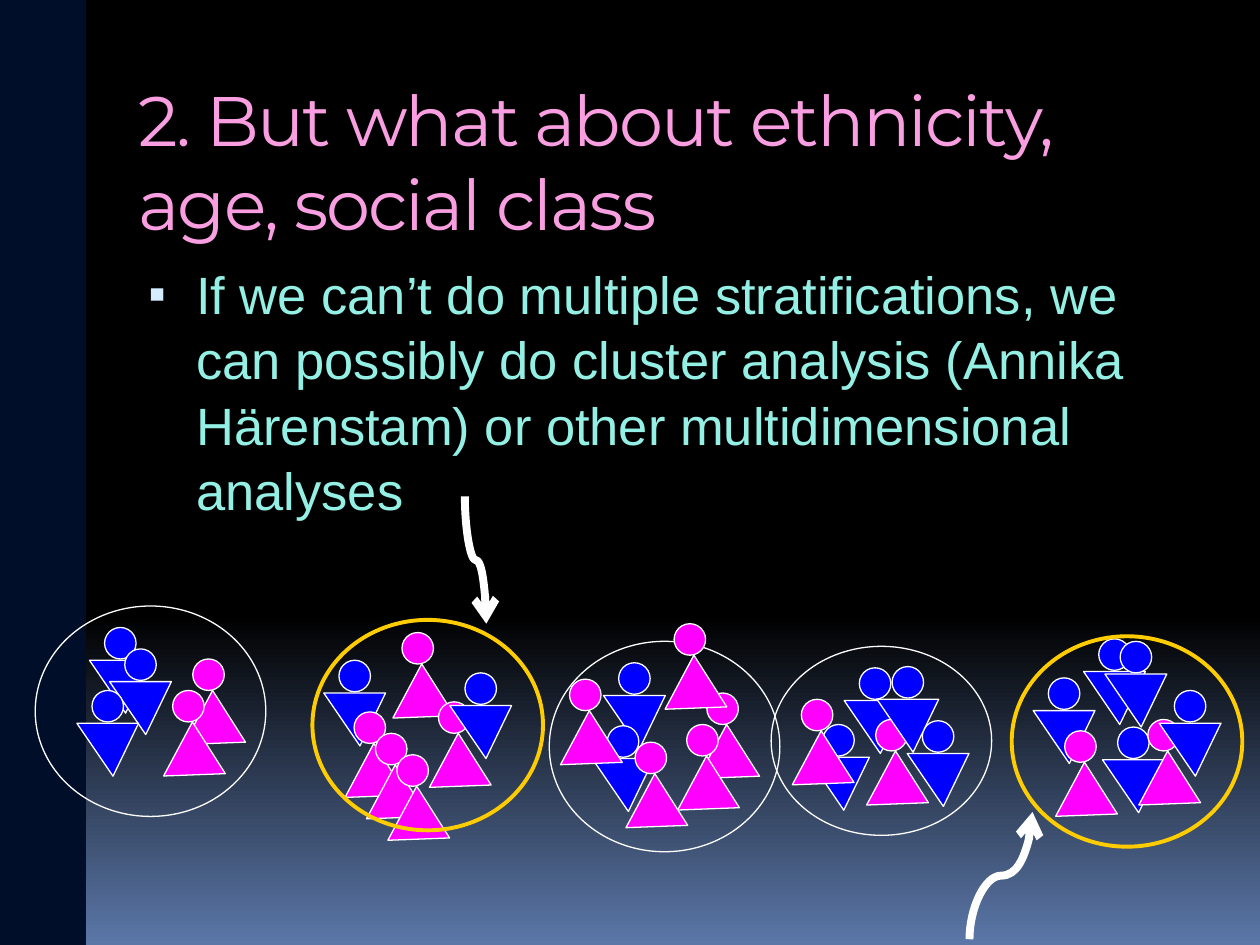
"""Build a slide on cluster analysis with five clusters of men and women."""
from lxml.etree import SubElement
from pptx import Presentation
from pptx.dml.color import RGBColor
from pptx.enum.shapes import MSO_CONNECTOR, MSO_SHAPE
from pptx.oxml.ns import qn
from pptx.util import Inches, Pt

WHITE, GOLD, BLUE, PINK = "FFFFFF", "FFCC00", "0000FF", "FF00FF"


def add_text(page, text, left, top, width, height, font, size, color, spacing=1.0, before=0):
    box = page.shapes.add_textbox(Inches(left), Inches(top), Inches(width), Inches(height))
    box.text_frame.word_wrap = True
    para = box.text_frame.paragraphs[0]
    para.line_spacing = spacing
    para.space_before = Pt(before)
    span = para.add_run()
    span.text = text
    span.font.name = font
    span.font.size = Pt(size)
    span.font.color.rgb = RGBColor.from_string(color)
    return para, span


def add_figure(page, kind, left, top, width, height, fill=None, line=WHITE, weight=0.75):
    figure = page.shapes.add_shape(kind, Inches(left), Inches(top), Inches(width), Inches(height))
    figure.shadow.inherit = False
    if fill:
        figure.fill.solid()
        figure.fill.fore_color.rgb = RGBColor.from_string(fill)
    else:
        figure.fill.background()
    figure.line.color.rgb = RGBColor.from_string(line)
    figure.line.width = Pt(weight)
    return figure


deck = Presentation()
deck.slide_width, deck.slide_height = Inches(10), Inches(7.5)
page = deck.slides.add_slide(deck.slide_layouts[6])

backdrop = page.background.fill
backdrop.gradient()
backdrop.gradient_angle = 270
for stop, position, color in zip(backdrop.gradient_stops, (0.65, 1), ("000000", "5B77A8")):
    stop.position = position
    stop.color.rgb = RGBColor.from_string(color)

add_figure(page, MSO_SHAPE.RECTANGLE, 0, 0, 0.67, 7.5, fill="000E2A", line="000E2A", weight=1.5)

para, span = add_text(page, "2. But what about ethnicity, age, social class",
                      1, 0.56, 8.5, 1, "Montserrat", 40, "F99FE1")
span.font._element.set("spc", "-100")

para, span = add_text(page, "If we can’t do multiple stratifications, we can possibly do cluster analysis "
                      "(Annika Härenstam) or other multidimensional analyses",
                      1.01, 2.01, 8.5, 5, "Arial", 30, "94F0E4", spacing=1.04, before=7)
layout = para._p.get_or_add_pPr()
layout.set("marL", str(Inches(0.45)))
layout.set("indent", str(Inches(-0.38)))
SubElement(SubElement(layout, qn("a:buClr")), qn("a:srgbClr"), val="D6ECFF")
SubElement(layout, qn("a:buSzPct"), val="95000")
SubElement(layout, qn("a:buFont"), typeface="Arial")
SubElement(layout, qn("a:buChar"), char="▪")

people = {
    "man": dict(color=BLUE, rotation=180, apex=0.415, head=(0.12, -0.26)),
    "woman": dict(color=PINK, rotation=357.8, apex=0.5, head=(0.08, -0.25)),
}
clusters = [
    dict(ring=(0.28, 4.81, 1.83, 1.67), line=WHITE, weight=0.75,
         behind=[("woman", 1.45, 5.48)],
         front=[("man", 0.71, 5.24), ("man", 0.87, 5.41), ("man", 0.61, 5.74), ("woman", 1.29, 5.73)]),
    dict(ring=(2.48, 4.92, 1.83, 1.67), line=GOLD, weight=2.25,
         behind=[("man", 2.57, 5.5), ("woman", 2.73, 5.9), ("woman", 2.9, 6.07), ("woman", 3.07, 6.24),
                 ("woman", 3.11, 5.27), ("woman", 3.4, 5.82)],
         front=[("man", 3.57, 5.6)]),
    dict(ring=(4.36, 5.09, 1.83, 1.67), line=WHITE, weight=0.75,
         behind=[("woman", 5.53, 5.75)],
         front=[("man", 4.79, 5.52), ("man", 4.7, 6.02), ("woman", 5.37, 6), ("woman", 5.27, 5.2),
                ("woman", 4.96, 6.14), ("woman", 4.44, 5.64 + 0.06 - 0.06)]),
    dict(ring=(6.12, 5.13, 1.75, 1.5), line=WHITE, weight=0.75,
         behind=[("man", 6.41, 6.01), ("man", 6.7, 5.56), ("man", 7.2, 5.98), ("woman", 6.28, 5.8),
                 ("woman", 6.87, 5.96)],
         front=[("man", 6.96, 5.55)]),
    dict(ring=(8.03, 5.05, 1.83, 1.67), line=GOLD, weight=2.25,
         behind=[("man", 8.6, 5.33), ("man", 8.75, 6.03), ("man", 8.77, 5.35), ("man", 8.2, 5.64),
                 ("woman", 8.37, 6.05), ("woman", 9.03, 5.96)],
         front=[("man", 9.2, 5.74)]),
]
for cluster in clusters:
    for member in cluster["behind"] + [None] + cluster["front"]:
        if member is None:
            add_figure(page, MSO_SHAPE.OVAL, *cluster["ring"], line=cluster["line"], weight=cluster["weight"])
            continue
        kind, left, top = member
        look = people[kind]
        across, up = look["head"]
        body = add_figure(page, MSO_SHAPE.ISOSCELES_TRIANGLE, left, top, 0.49, 0.42, fill=look["color"])
        body.rotation = look["rotation"]
        body.adjustments[0] = look["apex"]
        add_figure(page, MSO_SHAPE.OVAL, left + across, top + up, 0.25, 0.25, fill=look["color"])

for rotation, *ends in [(90, 8.45, 7.2, 7.44, 6.7), (270, 4.28, 4.36, 3.27, 4.53)]:
    arrow = page.shapes.add_connector(MSO_CONNECTOR.CURVE, *[Inches(end) for end in ends])
    arrow.line.color.rgb = RGBColor.from_string(WHITE)
    arrow.line.width = Pt(4.5)
    SubElement(arrow.line._get_or_add_ln(), qn("a:tailEnd"), type="arrow")
    properties = arrow._element.spPr
    properties.find(qn("a:xfrm")).set("rot", str(rotation * 60000))
    SubElement(properties, qn("a:effectLst"))

deck.save("out.pptx")
